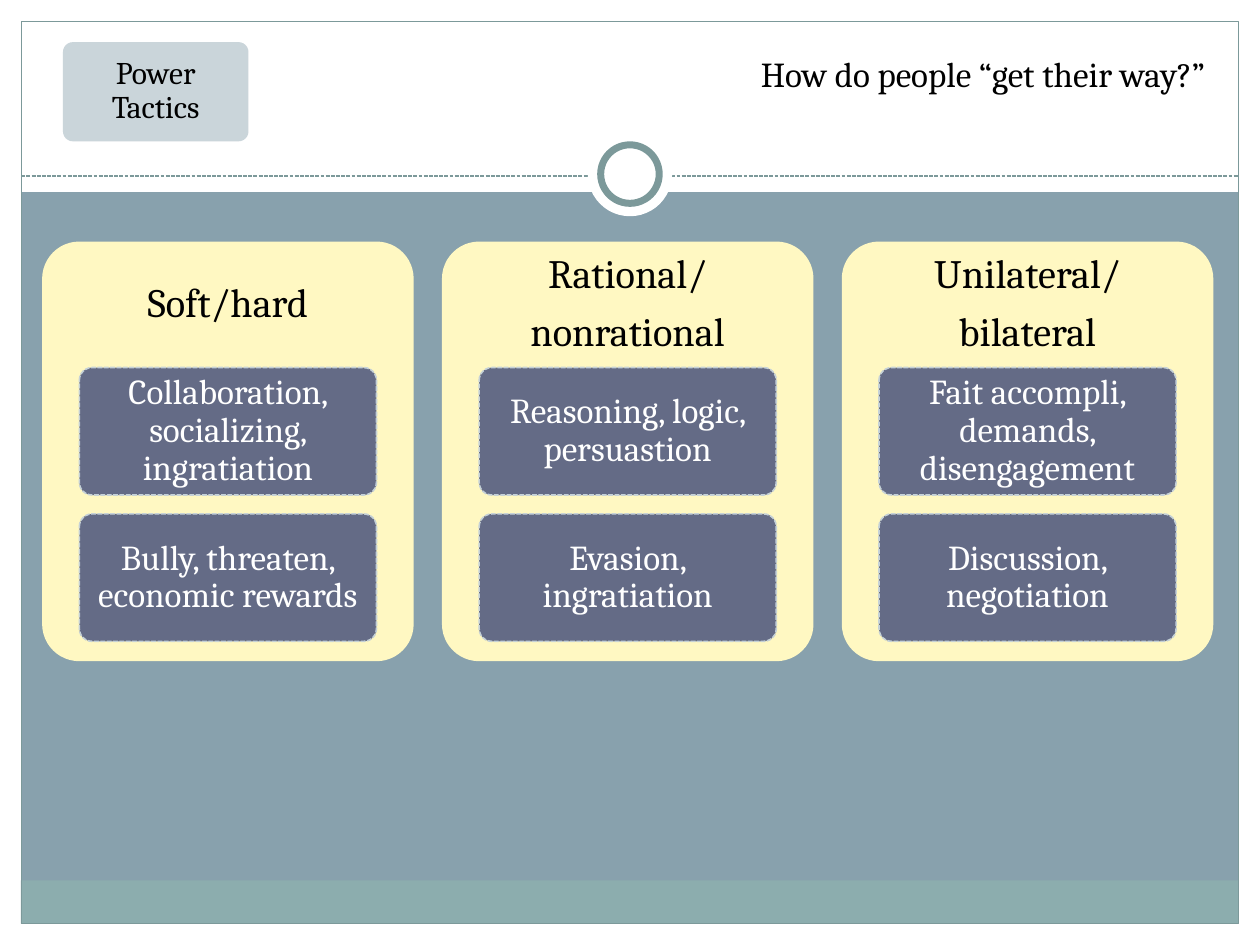
"""Build the power tactics slide with three cards of paired examples."""
from dataclasses import dataclass

from lxml import etree
from pptx import Presentation
from pptx import util as u
from pptx.dml.color import RGBColor
from pptx.enum import dml, shapes, text
from pptx.oxml.ns import qn


@dataclass(frozen=True)
class Theme:
    font: str = "Cambria"
    white: str = "FFFFFF"
    ink: str = "000000"
    ground: str = "88A1AD"
    band: str = "8CADAE"
    rule: str = "7C999A"
    card: str = "FFF8C2"
    tile: str = "646B86"
    pale: str = "C5D1D7"
    heading: int = 23
    body: int = 20
    label: int = 18


class SlideBuilder:
    def __init__(self, s, theme):
        self.s, self.t = s, theme
        s.background.fill.solid()
        s.background.fill.fore_color.rgb = RGBColor.from_string(theme.ground)

    def stroke(self, line, color, width, dashed=False):
        line.color.rgb = RGBColor.from_string(color)
        line.width = u.Pt(width)
        if dashed:
            line.dash_style = dml.MSO_LINE.SQUARE_DOT

    def shape(self, kind, box, fill=None, line=None, width=0.75, dashed=False, alpha=None):
        sp = self.s.shapes.add_shape(kind, *map(u.Cm, box))
        sp.shadow.inherit = False
        if fill:
            sp.fill.solid()
            sp.fill.fore_color.rgb = RGBColor.from_string(fill)
        else:
            sp.fill.background()
        if alpha:
            color = sp._element.spPr.find(qn("a:solidFill"))[0]
            etree.SubElement(color, qn("a:alpha")).set("val", str(alpha * 1000))
        if line:
            self.stroke(sp.line, line, width, dashed)
        else:
            sp.line.fill.background()
        return sp

    def rect(self, box, **style):
        return self.shape(shapes.MSO_SHAPE.RECTANGLE, box, **style)

    def oval(self, box, **style):
        return self.shape(shapes.MSO_SHAPE.OVAL, box, **style)

    def rounded(self, box, **style):
        sp = self.shape(shapes.MSO_SHAPE.ROUNDED_RECTANGLE, box, **style)
        sp.adjustments[0] = 0.1
        return sp

    def rule(self, x1, x2, y):
        cn = self.s.shapes.add_connector(
            shapes.MSO_CONNECTOR.STRAIGHT, u.Cm(x1), u.Cm(y), u.Cm(x2), u.Cm(y))
        self.stroke(cn.line, self.t.rule, 0.75, dashed=True)
        etree.SubElement(cn._element.spPr, qn("a:effectLst"))

    def label(self, sp, words, size, color, insets, align=text.PP_ALIGN.CENTER,
              anchor=text.MSO_ANCHOR.MIDDLE, spacing=0.9, after=0.35):
        tf = sp.text_frame
        tf.text = words
        tf.word_wrap = True
        tf.vertical_anchor = anchor
        tf.margin_left, tf.margin_top, tf.margin_right, tf.margin_bottom = map(u.Cm, insets)
        for p in tf.paragraphs:
            p.alignment = align
            p.line_spacing = spacing
            p.space_after = u.Pt(round(size * after))
            for r in p.runs:
                r.font.name = self.t.font
                r.font.size = u.Pt(size)
                r.font.color.rgb = RGBColor.from_string(color)

    def textbox(self, box, words, size, insets, **layout):
        sp = self.s.shapes.add_textbox(*map(u.Cm, box))
        self.label(sp, words, size, self.t.ink, insets, **layout)

    def card(self, x, y, heading, examples):
        t = self.t
        self.rounded((x, y, 7.49, 8.46), fill=t.card)
        self.textbox((x, y, 7.49, 2.54), heading, t.heading, (0.25,) * 4)
        for i, words in enumerate(examples):
            sp = self.rounded((x + 0.75, y + 2.54 + i * 2.95, 5.99, 2.57),
                              fill=t.tile, line=t.pale, width=0.9, dashed=True)
            self.label(sp, words, t.body, t.white, (0.15, 0.1, 0.15, 0.1))


def main():
    prs = Presentation()
    prs.slide_width, prs.slide_height = u.Cm(25.4), u.Cm(19.05)
    t = Theme()
    b = SlideBuilder(prs.slides.add_slide(prs.slide_layouts[6]), t)

    for box in ((0, 18.62, 25.4, 0.43), (0, 0, 25.4, 3.87),
                (0, 0, 0.43, 19.05), (24.97, 0, 0.43, 19.05)):
        b.rect(box, fill=t.white)
    b.rect((0.42, 17.75, 24.54, 0.87), fill=t.band)
    b.rect((0.43, 0.43, 24.54, 18.19), line=t.rule)
    b.rule(0.43, 24.97, 3.55)
    b.oval((11.85, 2.66, 1.7, 1.7), fill=t.white)
    b.oval((12.11, 2.92, 1.18, 1.18), fill=t.white, line=t.rule, width=4)

    b.textbox((0.85, 0.64, 23.7, 2.11), "How do people “get their way?”", t.body,
              (0.25, 0.13, 0.25, 0.97), align=text.PP_ALIGN.RIGHT,
              anchor=text.MSO_ANCHOR.BOTTOM, spacing=1.0, after=0)

    cards = (
        ("Soft/hard", ("Collaboration, socializing, ingratiation",
                       "Bully, threaten, economic rewards")),
        ("Rational/\nnonrational", ("Reasoning, logic, persuastion",
                                    "Evasion, ingratiation")),
        ("Unilateral/\nbilateral", ("Fait accompli, demands, disengagement",
                                    "Discussion, negotiation")),
    )
    for i, (heading, examples) in enumerate(cards):
        b.card(0.85 + i * 8.06, 4.87, heading, examples)

    topic = b.rounded((1.27, 0.85, 3.74, 2), fill=t.pale, alpha=90)
    b.label(topic, "Power Tactics", t.label, t.ink, (0.1, 0.08, 0.1, 0.08))
    prs.save("out.pptx")


if __name__ == "__main__":
    main()
